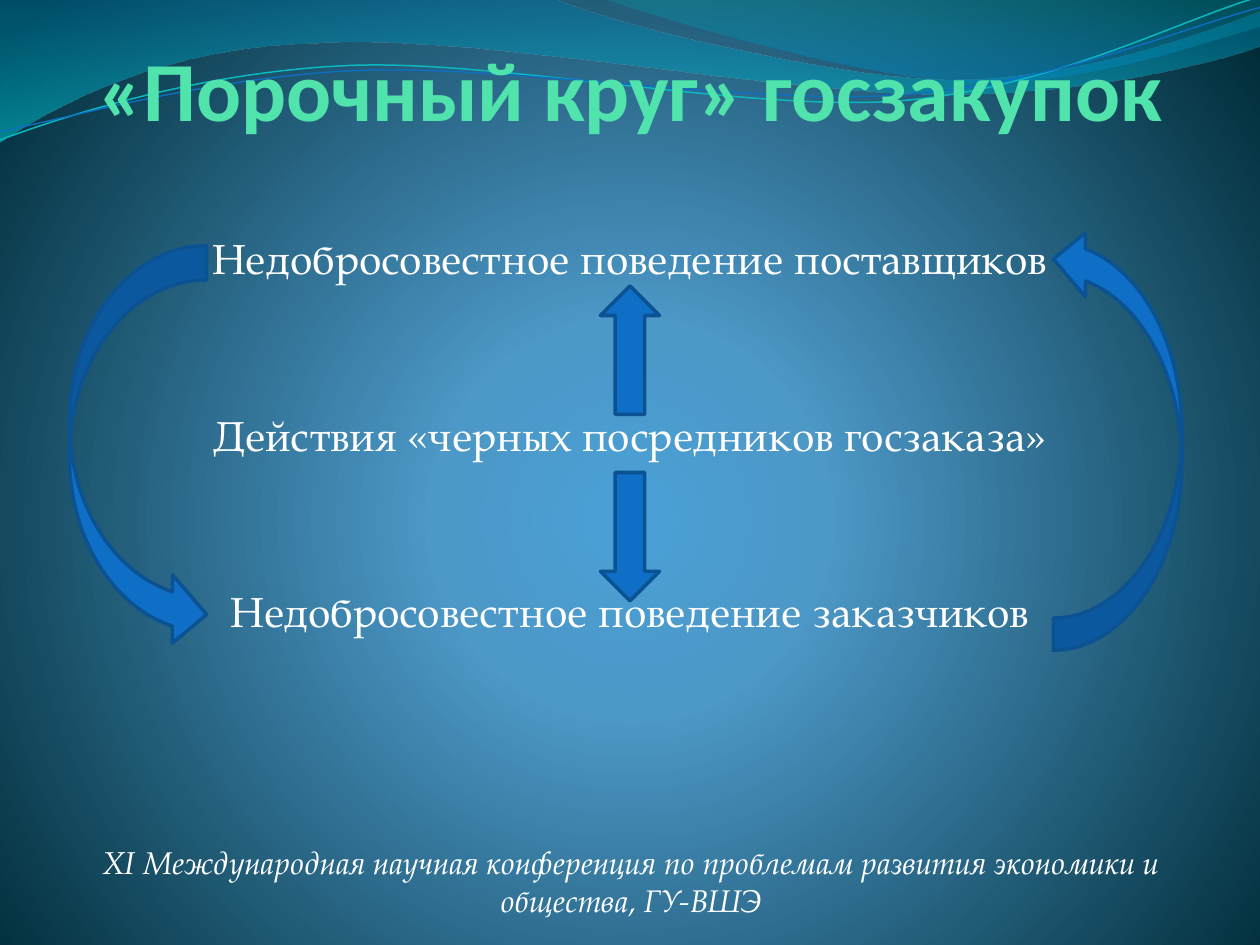
from pptx import Presentation
from pptx.dml.color import RGBColor
from pptx.enum.shapes import MSO_SHAPE
from pptx.enum.text import MSO_ANCHOR, PP_ALIGN
from pptx.oxml import parse_xml
from pptx.oxml.ns import nsdecls, qn
from pptx.util import Pt

CURVED, UP, DOWN = (MSO_SHAPE.CURVED_RIGHT_ARROW, MSO_SHAPE.UP_ARROW,
                    MSO_SHAPE.DOWN_ARROW)
CENTER, TOP, BOTTOM = PP_ALIGN.CENTER, MSO_ANCHOR.TOP, MSO_ANCHOR.BOTTOM

THEME = {
    "heading_font": "Calibri", "body_font": "TeX Gyre Pagella",
    "title_size": 48, "body_size": 24, "footer_size": 18,
    "title": "50E3AC", "text": "FFFFFF",
    "arrow": "0F6FC6", "arrow_edge": "0B5292",
    # gradient stops: position %, colour, opacity %
    "background": [(0, "4AA0D6", 100), (25, "4C98C7", 100), (100, "002C38", 100)],
    "wide_wave": [(0, "0074A1", 45), (100, "00C6CF", 55)],
    "right_wave": [(0, "00A1A9", 30), (80, "008BBF", 45)],
    "upper_line": "0AB8BF", "lower_line": "0F6FC6",
}
RADIAL = ('<a:path path="circle"><a:fillToRect l="10000" t="110000" '
          'r="10000" b="100000"/></a:path>')
VERTICAL = '<a:lin ang="5400000" scaled="1"/>'
LINE_TURN = 357.3

# Content
TITLE = "«Порочный круг» госзакупок"
STAGES = ["Недобросовестное поведение поставщиков",
          "Действия «черных посредников госзаказа»",
          "Недобросовестное поведение заказчиков"]
FOOTER = ("XI Международная научная конференция по проблемам развития "
          "экономики и общества, ГУ-ВШЭ")

# Outlines in points: a pair is a straight step, six numbers a Bezier step
WAVES = [
    ("wide_wave", [(0, 0), (316.8, -0.7),
                   (342.7, 12.2, 478.1, 45.4, 545.8, 45.4),
                   (614.2, 45.4, 689.8, 18.7, 720, 6.5), (720.7, 25.9),
                   (707.8, 31.7, 626.4, 54.7, 537.1, 54),
                   (447.8, 54, 275, 20.2, 185, 24.5),
                   (92.9, 25.9, 33.1, 59.8, -0.7, 81.4), (0, 0)]),
    ("right_wave", [(344.9, -0.7), (366.5, 7.9, 491, 44.6, 553.7, 46.8),
                    (616.3, 49.7, 691.9, 23, 720, 15.1), (720, 0),
                    (344.9, -0.7)]),
]
LINES = [
    ("upper_line", 0.85, [(-1.4, 63), (33.8, 51.7, 114.1, 29.4, 199.8, 29.9),
                          (284.8, 30.3, 425.8, 67.3, 512.4, 64.9),
                          (599, 62.4, 676.5, 25.7, 720.2, 15.5)]),
    ("lower_line", 0.75, [(-1.1, 58), (32.9, 53.8, 118.3, 32.5, 204.1, 33),
                          (290.6, 33.4, 428.9, 63.8, 515.5, 61.4),
                          (601.3, 59.6, 678.5, 30.1, 721.4, 21.3)]),
]
# shape, left, top, width, height, rotation
ARROWS = [(CURVED, 39.6, 140.4, 78.5, 230.4, 0),
          (CURVED, 601.9, 129.6, 73.4, 241.9, 180),
          (UP, 343.1, 163.4, 33.8, 73.4, 0),
          (DOWN, 343.1, 270, 33.8, 73.4, 0)]


def color(name):
    return RGBColor.from_string(THEME[name])


def set_gradient(properties, stops, direction):
    """Replace the solid fill of a properties element by a gradient."""
    marks = "".join(
        f'<a:gs pos="{pos * 1000}"><a:srgbClr val="{rgb}">'
        f'<a:alpha val="{alpha * 1000}"/></a:srgbClr></a:gs>'
        for pos, rgb, alpha in stops)
    gradient = parse_xml(f'<a:gradFill {nsdecls("a")} rotWithShape="1">'
                         f'<a:gsLst>{marks}</a:gsLst>{direction}</a:gradFill>')
    properties.replace(properties.find(qn("a:solidFill")), gradient)


def add_outline(page, steps, close):
    """Build a freeform on the step ends, then bend its Bezier steps."""
    ends = [(Pt(step[-2]), Pt(step[-1])) for step in steps]
    builder = page.shapes.build_freeform(*ends[0])
    builder.add_line_segments(ends[1:], close=close)
    shape = builder.convert_to_shape()
    shape.shadow.inherit = False
    segments = list(shape.element.iter(qn("a:lnTo")))
    for segment, step in zip(segments, steps[1:]):
        if len(step) == 6:
            points = "".join(
                f'<a:pt x="{Pt(x) - shape.left}" y="{Pt(y) - shape.top}"/>'
                for x, y in zip(step[::2], step[1::2]))
            curve = parse_xml(f'<a:cubicBezTo {nsdecls("a")}>{points}'
                              '</a:cubicBezTo>')
            segment.getparent().replace(segment, curve)
    return shape


def add_text(page, area, lines, size, font, ink, inset=(7.2, 3.6), anchor=TOP,
             gaps=(0,), bold=False, italic=False):
    box = page.shapes.add_textbox(*map(Pt, area))
    frame = box.text_frame
    frame.word_wrap = True
    frame.vertical_anchor = anchor
    frame.margin_left = frame.margin_right = Pt(inset[0])
    frame.margin_top = frame.margin_bottom = Pt(inset[1])
    frame.text = "\n".join(lines)
    for para, gap in zip(frame.paragraphs, gaps):
        para.alignment = CENTER
        para.space_before = Pt(gap)
        para.font.name = THEME[font]
        para.font.size = Pt(THEME[size])
        para.font.color.rgb = color(ink)
        para.font.bold, para.font.italic = bold, italic


def main():
    deck = Presentation()
    deck.slide_width, deck.slide_height = Pt(720), Pt(540)
    page = deck.slides.add_slide(deck.slide_layouts[6])

    # Background
    page.background.fill.solid()
    background = next(page.element.iter(qn("p:bgPr")))
    set_gradient(background, THEME["background"], RADIAL)

    # Waves and thin lines along the top
    for name, steps in WAVES:
        wave = add_outline(page, steps, True)
        wave.line.fill.background()
        wave.fill.solid()
        set_gradient(wave.element.spPr, THEME[name], VERTICAL)
    for name, width, steps in LINES:
        line = add_outline(page, steps, False)
        line.rotation = LINE_TURN
        line.fill.background()
        line.line.color.rgb = color(name)
        line.line.width = Pt(width)

    # Title and the three stages
    add_text(page, (11.5, 11.5, 697.7, 67.7), [TITLE], "title_size",
             "heading_font", "title", inset=(0, 0), anchor=BOTTOM, bold=True)
    add_text(page, (28.1, 129.6, 663.8, 343.4), STAGES, "body_size",
             "body_font", "text", inset=(3.6, 3.6), gaps=(4.8, 71.8, 71.8))

    # Arrows of the circle
    for kind, left, top, width, height, rotation in ARROWS:
        arrow = page.shapes.add_shape(kind, *map(Pt, (left, top, width, height)))
        arrow.rotation = rotation
        arrow.shadow.inherit = False
        arrow.fill.solid()
        arrow.fill.fore_color.rgb = color("arrow")
        arrow.line.color.rgb = color("arrow_edge")
        arrow.line.width = Pt(2)

    # Conference line
    add_text(page, (11.5, 478.1, 697.7, 51.1), [FOOTER], "footer_size",
             "body_font", "text", italic=True)

    deck.save("out.pptx")


if __name__ == "__main__":
    main()
